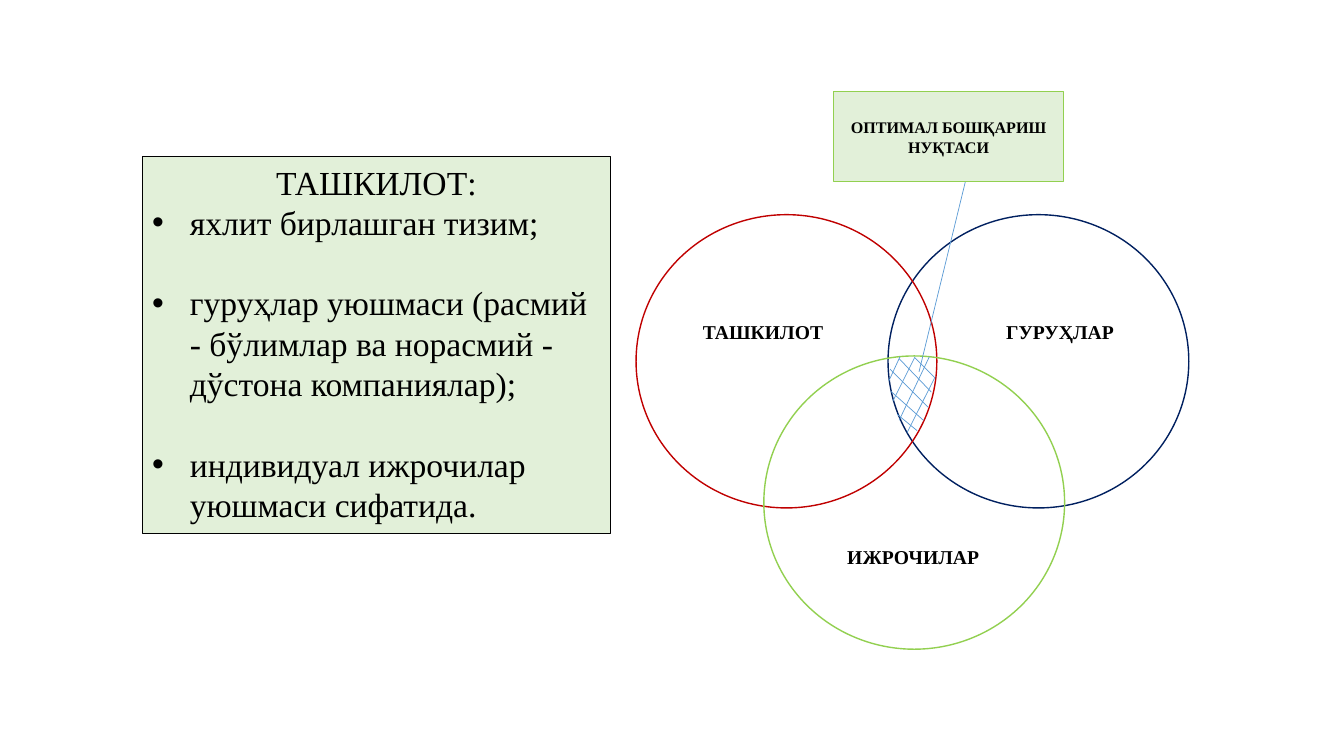
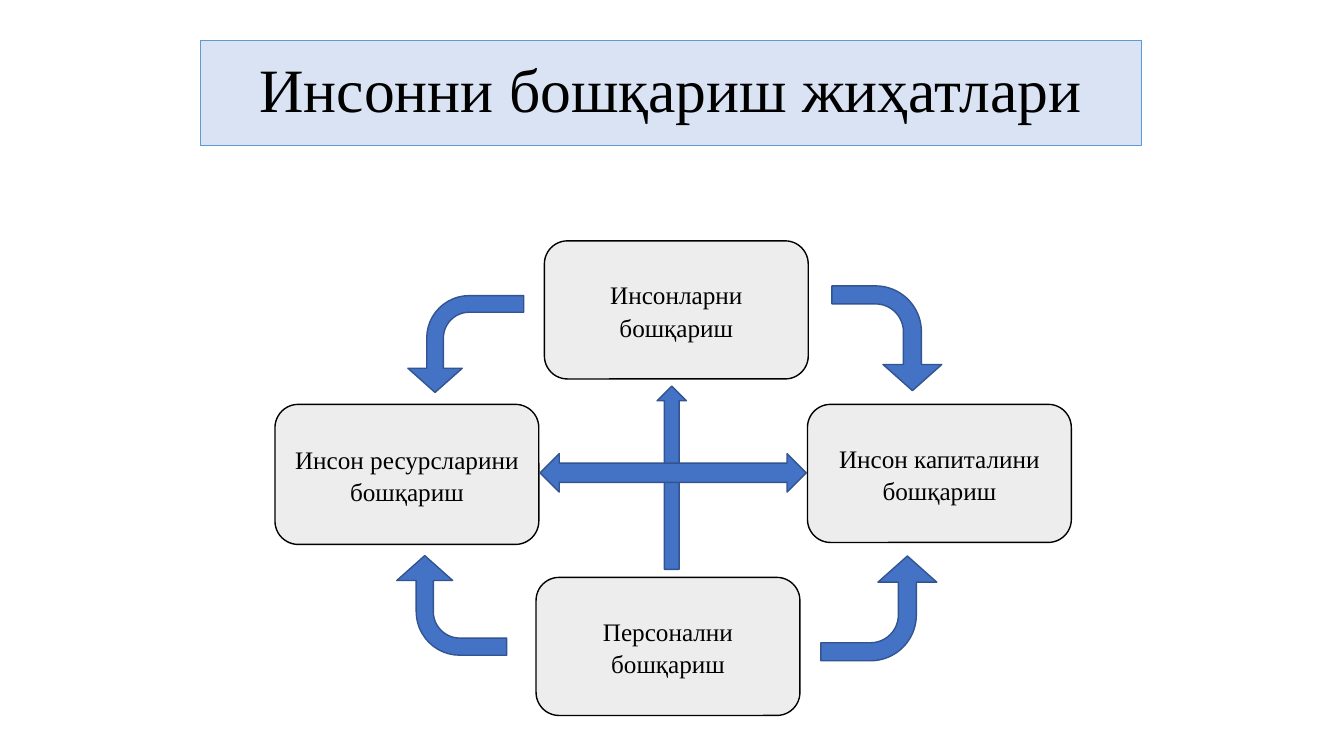
from lxml import etree
from pptx import Presentation
from pptx.dml.color import RGBColor
from pptx.enum.shapes import MSO_CONNECTOR, MSO_SHAPE
from pptx.enum.text import MSO_ANCHOR, MSO_AUTO_SIZE, PP_ALIGN
from pptx.oxml.ns import qn
from pptx.util import Cm, Pt

STRAIGHT = MSO_CONNECTOR.STRAIGHT
OVAL, RECT, ROUNDED = MSO_SHAPE.OVAL, MSO_SHAPE.RECTANGLE, MSO_SHAPE.ROUNDED_RECTANGLE
UP_ARROW, LEFT_RIGHT_ARROW = MSO_SHAPE.UP_ARROW, MSO_SHAPE.LEFT_RIGHT_ARROW
BENT_ARROW = MSO_SHAPE.BENT_ARROW
MIDDLE, TOP = MSO_ANCHOR.MIDDLE, MSO_ANCHOR.TOP
CENTER, LEFT = PP_ALIGN.CENTER, PP_ALIGN.LEFT
NO_AUTOFIT = MSO_AUTO_SIZE.NONE

FONT = "Times New Roman"
COLORS = {
    "black": "000000", "navy": "002060", "red": "C00000", "green": "92D050",
    "thin_blue": "5B9BD5", "pale_green": "E2F0D9", "pale_blue": "DAE3F3",
    "grey": "EDEDED", "arrow": "4472C4", "arrow_edge": "325491",
}
LIST_INDENT = 0.95
TITLE_AND_CONTENT, TITLE_ONLY = 1, 5

# Organisation slide
LIST_HEADING = "ТАШКИЛОТ:"
LIST_ITEMS = [
    "яхлит бирлашган тизим;",
    "гуруҳлар уюшмаси (расмий - бўлимлар ва норасмий - дўстона компаниялар);",
    "индивидуал ижрочилар уюшмаси сифатида.",
]
CIRCLE_SIZE = (7.58, 7.39)
CIRCLES = [((22.38, 5.41), "navy"), ((16.03, 5.41), "red"), ((19.25, 8.97), "green")]
CIRCLE_LABELS = [
    ("ТАШКИЛОТ", (16.59, 7.75, 5.28, 1.17)),
    ("ГУРУҲЛАР", (24.49, 7.75, 4.45, 1.17)),
    ("ИЖРОЧИЛАР", (20.02, 13.41, 5.99, 1.17)),
]
HATCHING = [
    (22.68, 8.99, 22.4, 9.6), (23.06, 8.99, 22.5, 10.11),
    (23.42, 8.99, 22.66, 10.59), (23.55, 9.53, 22.86, 10.9),
    (23.06, 9.02, 23.57, 9.53), (22.66, 9.04, 23.47, 9.88),
    (22.43, 9.3, 23.39, 10.26), (22.45, 9.86, 23.27, 10.59),
    (22.61, 10.44, 23.11, 10.85),
]
CALLOUT_POINTER = (23.16, 9.37, 24.33, 4.57)

# Management slide
ASPECTS = [
    ("Инсон ресурсларини бошқариш", (6.93, 10.19, 6.65, 3.53)),
    ("Инсонларни бошқариш", (13.72, 6.07, 6.65, 3.48)),
    ("Инсон капиталини бошқариш", (20.35, 10.19, 6.65, 3.48)),
    ("Персонални бошқариш", (13.51, 14.55, 6.65, 3.48)),
]
CROSS_ARROWS = [
    (UP_ARROW, (16.56, 9.73, 0.74, 4.62)),
    (LEFT_RIGHT_ARROW, (13.61, 11.43, 6.71, 0.97)),
]
# Box, rotation, mirrored
TURN_ARROWS = [
    ((21.03, 7.14, 2.64, 2.77), 90, False),
    ((10.13, 13.87, 2.51, 2.77), 270, False),
    ((20.83, 13.87, 2.64, 2.92), 90, True),
    ((10.52, 7.21, 2.44, 2.92), 270, True),
]
TURN_ADJUSTMENTS = (0.172, 0.281, 0.25, 0.438)


def rgb(name):
    return RGBColor.from_string(COLORS[name])


def paint(shape, fill, line, width):
    if fill:
        shape.fill.solid()
        shape.fill.fore_color.rgb = rgb(fill)
    else:
        shape.fill.background()
    shape.line.color.rgb = rgb(line)
    shape.line.width = Pt(width)


def place(shape, box):
    shape.left, shape.top, shape.width, shape.height = map(Cm, box)


def prepare_frame(shape, anchor):
    frame = shape.text_frame
    frame.word_wrap = True
    frame.auto_size = NO_AUTOFIT
    frame.vertical_anchor = anchor
    return frame


def style_paragraph(paragraph, size, bold=False, align=CENTER, spacing=1.07):
    paragraph.alignment = align
    paragraph.line_spacing = spacing
    paragraph.space_before = Pt(0)
    font = paragraph.font
    font.name, font.size, font.bold = FONT, Pt(size), bold
    font.color.rgb = rgb("black")


def write(shape, text, size, bold=False, spacing=1.07):
    frame = prepare_frame(shape, MIDDLE)
    frame.text = text
    style_paragraph(frame.paragraphs[0], size, bold, spacing=spacing)


def set_bullet(paragraph, char=None):
    props = paragraph._p.get_or_add_pPr()
    indent = Cm(LIST_INDENT) if char else 0
    props.set("marL", str(indent))
    props.set("indent", str(-indent))
    if char:
        etree.SubElement(props, qn("a:buFont")).set("typeface", "Arial")
        etree.SubElement(props, qn("a:buChar")).set("char", char)
    else:
        etree.SubElement(props, qn("a:buNone"))


def add_figure(slide, kind, box, fill, line, width=1):
    shape = slide.shapes.add_shape(kind, *map(Cm, box))
    shape.shadow.inherit = False
    paint(shape, fill, line, width)
    return shape


def add_thin_line(slide, ends):
    line = slide.shapes.add_connector(STRAIGHT, *map(Cm, ends))
    line.line.color.rgb = rgb("thin_blue")
    line.line.width = Pt(0.5)
    etree.SubElement(line._element.spPr, qn("a:effectLst"))


def add_turn_arrow(slide, box, rotation, mirrored):
    arrow = add_figure(slide, BENT_ARROW, box, "arrow", "arrow_edge")
    for index, value in enumerate(TURN_ADJUSTMENTS):
        arrow.adjustments[index] = value
    arrow.rotation = rotation
    if mirrored:
        arrow._element.spPr.find(qn("a:xfrm")).set("flipH", "1")


def fill_list(body):
    place(body, (3.58, 3.94, 11.81, 9.5))
    paint(body, "pale_green", "black", 0.75)
    frame = prepare_frame(body, TOP)
    heading = frame.paragraphs[0]
    heading.text = LIST_HEADING
    set_bullet(heading)
    style_paragraph(heading, 24, spacing=1.0)
    for number, item in enumerate(LIST_ITEMS):
        paragraph = frame.add_paragraph()
        paragraph.text = item
        set_bullet(paragraph, "•")
        style_paragraph(paragraph, 24, align=LEFT, spacing=1.0)
        if number:
            paragraph.space_before = Pt(28.8)


def build_organisation_slide(prs):
    slide = prs.slides.add_slide(prs.slide_layouts[TITLE_AND_CONTENT])
    title = slide.shapes.title._element
    title.getparent().remove(title)
    fill_list(slide.placeholders[1])

    # Overlapping circles
    for corner, color in CIRCLES:
        add_figure(slide, OVAL, corner + CIRCLE_SIZE, None, color)
    for text, box in CIRCLE_LABELS:
        write(slide.shapes.add_textbox(*map(Cm, box)), text, 14, bold=True)

    # Hatched common area and its callout
    for ends in HATCHING + [CALLOUT_POINTER]:
        add_thin_line(slide, ends)
    callout = add_figure(slide, RECT, (21.01, 2.31, 5.79, 2.26), "pale_green", "green")
    write(callout, "ОПТИМАЛ БОШҚАРИШ НУҚТАСИ", 11.5, bold=True)


def build_management_slide(prs):
    slide = prs.slides.add_slide(prs.slide_layouts[TITLE_ONLY])
    title = slide.shapes.title
    place(title, (5.05, 1.02, 23.72, 2.64))
    paint(title, "pale_blue", "thin_blue", 0.5)
    write(title, "Инсонни бошқариш жиҳатлари", 44, spacing=0.9)

    # Four aspects
    for text, box in ASPECTS:
        write(add_figure(slide, ROUNDED, box, "grey", "black"), text, 18)

    # Arrows between them
    for kind, box in CROSS_ARROWS:
        add_figure(slide, kind, box, "arrow", "arrow_edge")
    for box, rotation, mirrored in TURN_ARROWS:
        add_turn_arrow(slide, box, rotation, mirrored)


def main():
    prs = Presentation()
    prs.slide_width, prs.slide_height = Cm(33.87), Cm(19.05)
    build_organisation_slide(prs)
    build_management_slide(prs)
    prs.save("out.pptx")


if __name__ == "__main__":
    main()
